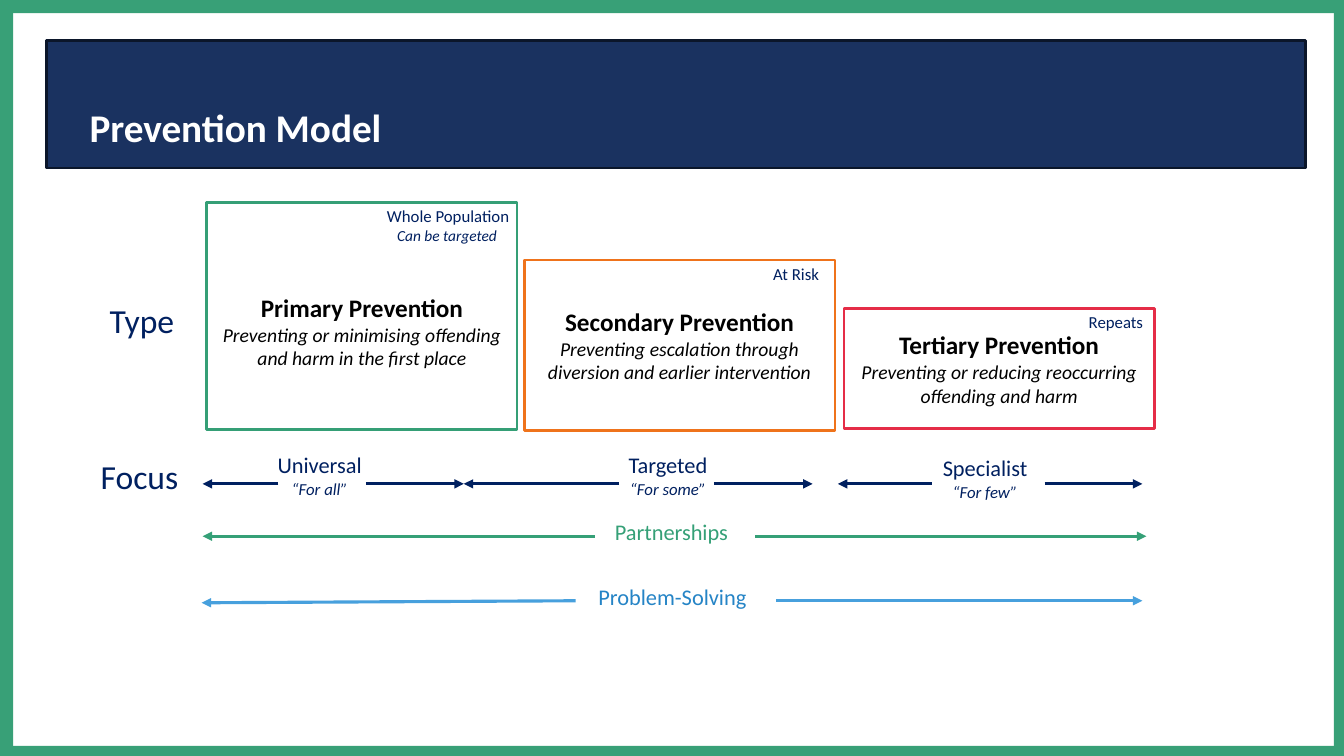
from dataclasses import dataclass

import pptx
import pptx.dml.color
import pptx.enum.shapes
import pptx.enum.text
import pptx.oxml
import pptx.oxml.ns
import pptx.util
from pptx.util import Inches

FONT = "Calibri"
COLORS = {
    "white": "FFFFFF",
    "black": "000000",
    "frame": "38A077",
    "banner": "1A3260",
    "banner_edge": "0B162A",
    "navy": "002060",
    "primary": "359F76",
    "secondary": "EF731B",
    "tertiary": "E52D47",
    "partnerships": "35A077",
    "problem_text": "2584C6",
    "problem_arrow": "47A0DD",
}
LEFT = pptx.enum.text.PP_ALIGN.LEFT
CENTER = pptx.enum.text.PP_ALIGN.CENTER


@dataclass(frozen=True)
class TextLine:
    text: str
    size: int
    bold: bool = False
    italic: bool = False
    align: int = CENTER
    right_indent: float = 0


@dataclass(frozen=True)
class Label:
    box: tuple[float, float, float, float]
    lines: tuple[TextLine, ...]
    color: str = "navy"


@dataclass(frozen=True)
class Prevention:
    box: tuple[float, float, float, float]
    edge: str
    title: str
    description: str
    top_inset: float = 0.05


@dataclass(frozen=True)
class Arrow:
    start: tuple[float, float]
    tip: tuple[float, float]
    color: str = "navy"


FRAME_BARS = (
    (0, 0, 0.13, 7.5),
    (0, 0, 13.33, 0.13),
    (0, 7.4, 13.33, 0.1),
    (13.23, 0, 0.1, 7.5),
)
PREVENTIONS = (
    Prevention((2.05, 2.01, 3.08, 2.25), "primary", "Primary Prevention",
               "Preventing or minimising offending and harm in the first place", 0.35),
    Prevention((5.2, 2.58, 3.08, 1.69), "secondary", "Secondary Prevention",
               "Preventing escalation through diversion and earlier intervention"),
    Prevention((8.37, 3.06, 3.08, 1.19), "tertiary", "Tertiary Prevention",
               "Preventing or reducing reoccurring offending and harm"),
)
LABELS = (
    Label((0.79, 0.98, 4.03, 0.57),
          (TextLine("Prevention Model", 28, bold=True, align=LEFT),), "white"),
    Label((0.99, 2.93, 1.06, 0.6), (TextLine("Type", 24, align=LEFT),)),
    Label((0.9, 4.47, 1.74, 0.6), (TextLine("Focus", 24, align=LEFT),)),
    Label((3.74, 1.99, 1.46, 0.6),
          (TextLine("Whole Population", 12, align=LEFT),
           TextLine("Can be targeted", 11, italic=True, right_indent=0.07))),
    Label((7.57, 2.57, 1.13, 0.36), (TextLine("At Risk", 12, align=LEFT),)),
    Label((10.7, 3.04, 1.13, 0.36), (TextLine("Repeats", 12, align=LEFT),)),
    Label((2.59, 4.43, 1.22, 0.68),
          (TextLine("Universal", 16, right_indent=0.06),
           TextLine("“For all”", 12, italic=True))),
    Label((6.07, 4.43, 1.22, 0.68),
          (TextLine("Targeted", 16, right_indent=0.11),
           TextLine("“For some”", 12, italic=True))),
    Label((9.24, 4.46, 1.22, 0.68),
          (TextLine("Specialist", 16, right_indent=0.16),
           TextLine("“For few”", 12, italic=True))),
    Label((5.66, 5.09, 2, 0.38), (TextLine("Partnerships", 16),), "partnerships"),
    Label((5.49, 5.74, 2.36, 0.37), (TextLine("Problem-Solving", 16),), "problem_text"),
)
FOCUS_Y = 4.8
FOCUS_SPANS = ((2.76, 2.01), (3.63, 4.6), (6.14, 4.6),
               (7.08, 8.06), (9.24, 8.31), (10.36, 11.33))
ARROWS = (
    *(Arrow((start, FOCUS_Y), (tip, FOCUS_Y)) for start, tip in FOCUS_SPANS),
    Arrow((5.9, 5.32), (2.01, 5.32), "partnerships"),
    Arrow((7.49, 5.32), (11.37, 5.32), "partnerships"),
    Arrow((5.71, 5.96), (2, 5.98), "problem_arrow"),
    Arrow((7.7, 5.96), (11.33, 5.96), "problem_arrow"),
)


def rgb(name: str) -> pptx.dml.color.RGBColor:
    return pptx.dml.color.RGBColor.from_string(COLORS[name])


def add_rectangle(slide, box: tuple[float, ...], fill: str, edge: str | None = None):
    shape = slide.shapes.add_shape(
        pptx.enum.shapes.MSO_SHAPE.RECTANGLE, *map(Inches, box))
    shape.shadow.inherit = False
    shape.fill.solid()
    shape.fill.fore_color.rgb = rgb(fill)
    if edge:
        shape.line.color.rgb = rgb(edge)
        shape.line.width = pptx.util.Pt(1.75)
    else:
        shape.line.fill.background()
    return shape


def write_lines(text_frame, lines: tuple[TextLine, ...], color: str) -> None:
    text_frame.word_wrap = True
    for index, line in enumerate(lines):
        paragraph = text_frame.add_paragraph() if index else text_frame.paragraphs[0]
        paragraph.text = line.text
        paragraph.alignment = line.align
        if line.right_indent:
            paragraph._p.get_or_add_pPr().set("marR", str(Inches(line.right_indent)))
        font = paragraph.font
        font.name = FONT
        font.size = pptx.util.Pt(line.size)
        font.bold = line.bold
        font.italic = line.italic
        font.color.rgb = rgb(color)


def add_prevention(slide, prevention: Prevention) -> None:
    shape = add_rectangle(slide, prevention.box, "white", prevention.edge)
    text_frame = shape.text_frame
    text_frame.vertical_anchor = pptx.enum.text.MSO_ANCHOR.MIDDLE
    text_frame.margin_top = Inches(prevention.top_inset)
    write_lines(text_frame, (TextLine(prevention.title, 18, bold=True),
                             TextLine(prevention.description, 14, italic=True)), "black")


def add_label(slide, label: Label) -> None:
    text_box = slide.shapes.add_textbox(*map(Inches, label.box))
    write_lines(text_box.text_frame, label.lines, label.color)


def add_arrow(slide, arrow: Arrow) -> None:
    connector = slide.shapes.add_connector(
        pptx.enum.shapes.MSO_CONNECTOR.STRAIGHT,
        *map(Inches, arrow.start + arrow.tip))
    connector.line.color.rgb = rgb(arrow.color)
    connector.line.width = pptx.util.Pt(2.25)
    namespace = pptx.oxml.ns.nsdecls("a")
    connector.line._get_or_add_ln().append(
        pptx.oxml.parse_xml(f'<a:tailEnd {namespace} type="triangle"/>'))
    connector._element.spPr.append(pptx.oxml.parse_xml(f"<a:effectLst {namespace}/>"))


def main() -> None:
    presentation = pptx.Presentation()
    presentation.slide_width = Inches(13.33)
    presentation.slide_height = Inches(7.5)
    slide = presentation.slides.add_slide(presentation.slide_layouts[6])
    for bar in FRAME_BARS:
        add_rectangle(slide, bar, "frame")
    add_rectangle(slide, (0.46, 0.4, 12.49, 1.27), "banner", "banner_edge")
    for prevention in PREVENTIONS:
        add_prevention(slide, prevention)
    for label in LABELS:
        add_label(slide, label)
    for arrow in ARROWS:
        add_arrow(slide, arrow)
    presentation.save("out.pptx")


if __name__ == "__main__":
    main()
